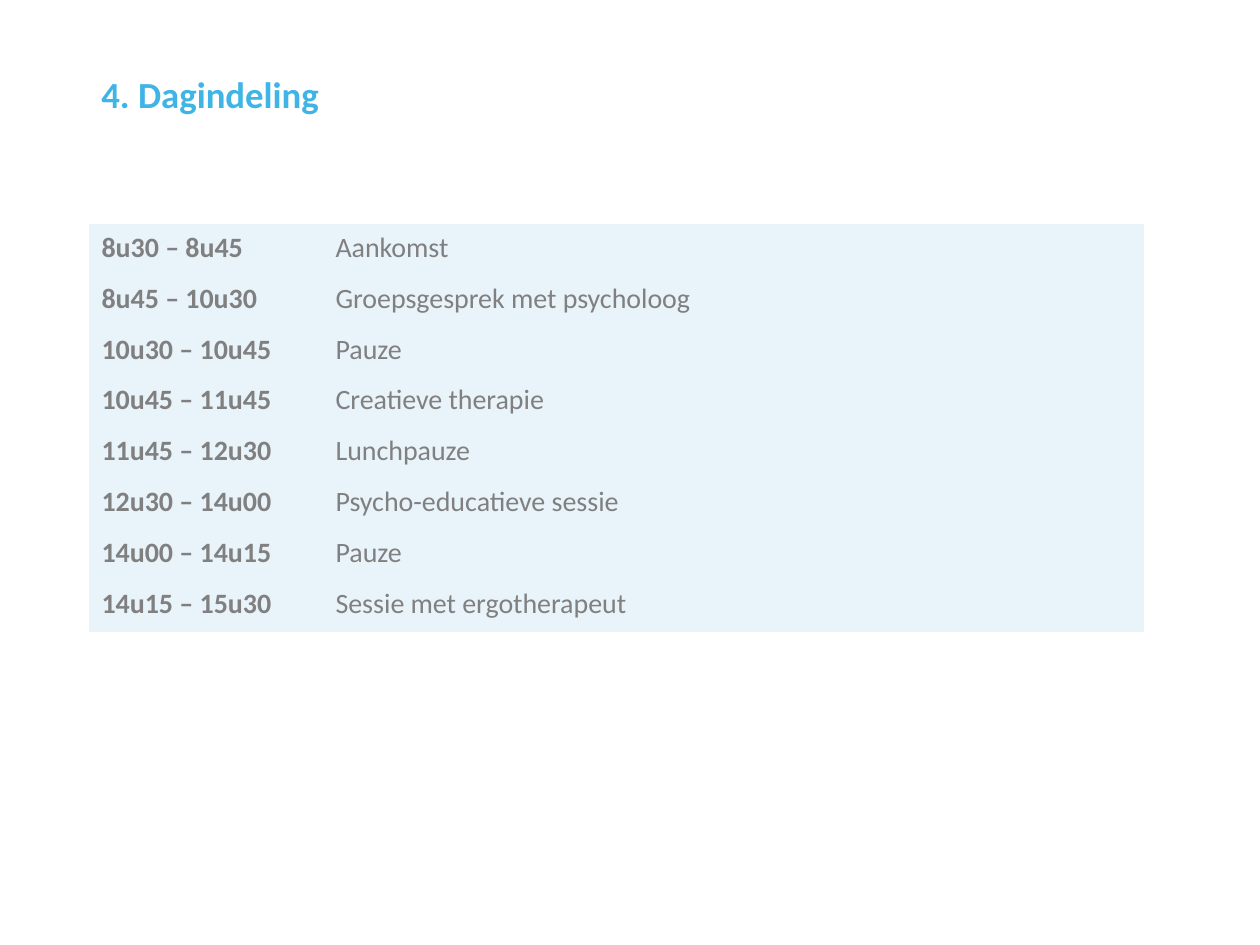
from dataclasses import dataclass

from pptx import Presentation
from pptx.dml.color import RGBColor
from pptx.enum.text import MSO_ANCHOR
from pptx.util import Pt

TOP = MSO_ANCHOR.TOP
EMU_PER_PX = 914400 / 126
PLAIN_TABLE_STYLE = "{2D5ABB26-0587-4C30-8999-92F81FD0307C}"


@dataclass(frozen=True)
class Theme:
    font: str = "Calibri"
    heading: str = "40B5E5"
    body: str = "808080"
    panel: str = "E9F3FA"
    heading_size: int = 21
    body_size: int = 16


def px(length):
    return round(length * EMU_PER_PX)


def write(frame, text, *, font, size, color, bold=False, spacing=None):
    frame.word_wrap = True
    paragraph = frame.paragraphs[0]
    paragraph.line_spacing = spacing
    run = paragraph.add_run()
    run.text = text
    run.font.name = font
    run.font.size = Pt(size)
    run.font.bold = bold
    run.font.color.rgb = RGBColor.from_string(color)


class SlideBuilder:
    def __init__(self, slide, theme):
        self.slide = slide
        self.theme = theme

    def heading(self, text, left, top, width, height):
        box = self.slide.shapes.add_textbox(*map(px, (left, top, width, height)))
        box.text_frame.vertical_anchor = TOP
        write(box.text_frame, text, font=self.theme.font,
              size=self.theme.heading_size, color=self.theme.heading,
              bold=True, spacing=0.9)

    def timetable(self, entries, left, top, column_widths, row_height):
        frame = self.slide.shapes.add_table(
            len(entries), len(column_widths), px(left), px(top),
            px(sum(column_widths)), px(row_height * len(entries)))
        table = frame.table
        table.first_row = False
        table.horz_banding = False
        table._tbl.tblPr[0].text = PLAIN_TABLE_STYLE
        for column, width in zip(table.columns, column_widths):
            column.width = px(width)
        for row, entry in zip(table.rows, entries):
            row.height = px(row_height)
            for position, (cell, text) in enumerate(zip(row.cells, entry)):
                cell.fill.solid()
                cell.fill.fore_color.rgb = RGBColor.from_string(self.theme.panel)
                cell.vertical_anchor = TOP
                write(cell.text_frame, text, font=self.theme.font,
                      size=self.theme.body_size, color=self.theme.body,
                      bold=position == 0)


def main():
    presentation = Presentation()
    presentation.slide_width = px(1260)
    presentation.slide_height = px(945)
    slide = presentation.slides.add_slide(presentation.slide_layouts[6])
    builder = SlideBuilder(slide, Theme())

    day_schedule = [
        ("8u30 – 8u45", "Aankomst"),
        ("8u45 – 10u30", "Groepsgesprek met psycholoog"),
        ("10u30 – 10u45", "Pauze"),
        ("10u45 – 11u45", "Creatieve therapie"),
        ("11u45 – 12u30", "Lunchpauze"),
        ("12u30 – 14u00", "Psycho-educatieve sessie"),
        ("14u00 – 14u15", "Pauze"),
        ("14u15 – 15u30", "Sessie met ergotherapeut"),
    ]
    builder.heading("4. Dagindeling", 89, 71, 1055, 115)
    builder.timetable(day_schedule, 89, 224, (234, 821), 51)
    presentation.save("out.pptx")


if __name__ == "__main__":
    main()
